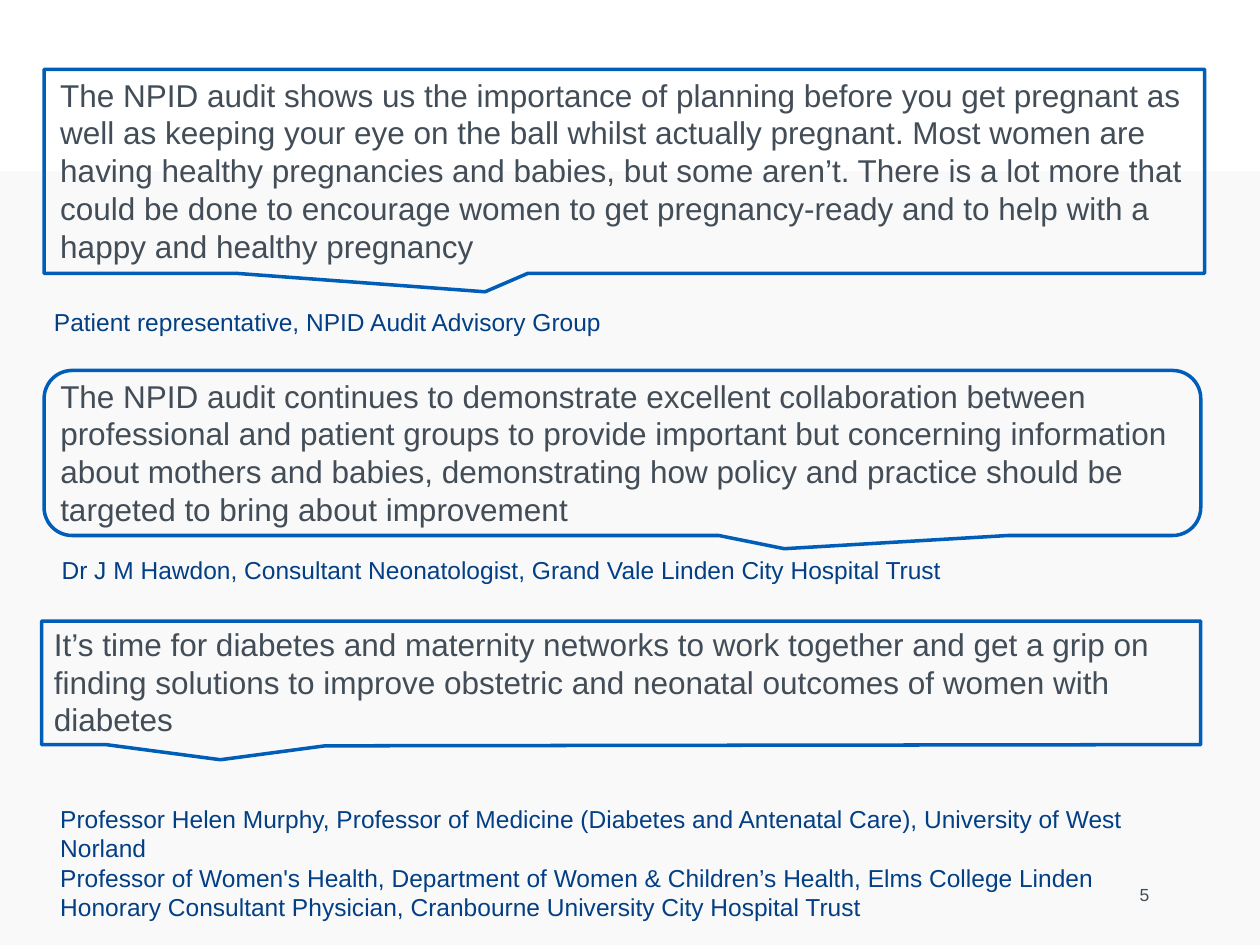
from pptx import Presentation
from pptx.dml.color import RGBColor
from pptx.enum.shapes import MSO_SHAPE
from pptx.enum.text import MSO_ANCHOR, MSO_AUTO_SIZE, PP_ALIGN
from pptx.util import Emu, Pt

RECT = MSO_SHAPE.RECTANGLE
SQUARE = MSO_SHAPE.RECTANGULAR_CALLOUT
ROUND = MSO_SHAPE.ROUNDED_RECTANGULAR_CALLOUT
TOP, MIDDLE = MSO_ANCHOR.TOP, MSO_ANCHOR.MIDDLE
LEFT, RIGHT = PP_ALIGN.LEFT, PP_ALIGN.RIGHT
GROW, FIXED = MSO_AUTO_SIZE.SHAPE_TO_FIT_TEXT, MSO_AUTO_SIZE.NONE

PALE = RGBColor(0xF9, 0xF9, 0xF9)
BLUE = RGBColor(0x00, 0x5E, 0xB8)
NAVY = RGBColor(0x03, 0x3F, 0x85)
GREY = RGBColor(0x42, 0x4D, 0x58)

PX = 9144  # EMU in one px, at 100 px to the inch

QUOTE = {"name": "Arial", "size": Pt(18)}
SOURCE = {"name": "Arial", "size": Pt(14)}
NUMBER = {"name": "Arial", "size": Pt(10)}


def emu(*px):
    return [Emu(n * PX) for n in px]


class Page:
    def __init__(self, slide):
        self.shapes = slide.shapes

    def band(self, box, color):
        shape = self.shapes.add_shape(RECT, *emu(*box))
        shape.shadow.inherit = False
        shape.fill.solid()
        shape.fill.fore_color.rgb = color
        shape.line.fill.background()

    def outline(self, shape):
        """Leave only a blue line around the shape."""
        shape.shadow.inherit = False
        shape.fill.background()
        shape.line.color.rgb = BLUE
        shape.line.width = Pt(2)

    def bubble(self, kind, box, *tail):
        shape = self.shapes.add_shape(kind, *emu(*box))
        for i, value in enumerate(tail):
            shape.adjustments[i] = value
        self.outline(shape)

    def polygon(self, start, *points):
        draw = self.shapes.build_freeform(*start, scale=PX)
        draw.add_line_segments(points, close=True)
        self.outline(draw.convert_to_shape())

    def text(self, box, lines, font, color, align=LEFT, anchor=TOP, fit=GROW):
        frame = self.shapes.add_textbox(*emu(*box)).text_frame
        layout = {"word_wrap": True, "auto_size": fit, "vertical_anchor": anchor}
        for key, value in layout.items():
            setattr(frame, key, value)
        frame.text = "\n".join(lines)
        for para in frame.paragraphs:
            para.alignment = align
            for key, value in font.items():
                setattr(para.font, key, value)
            para.font.color.rgb = color


QUOTES = [
    ((38, 55, 916, 162),
     "The NPID audit shows us the importance of planning before you get "
     "pregnant as well as keeping your eye on the ball whilst actually "
     "pregnant. Most women are having healthy pregnancies and babies, but "
     "some aren’t. There is a lot more that could be done to encourage women "
     "to get pregnancy-ready and to help with a happy and healthy pregnancy"),
    ((38, 294, 919, 131),
     "The NPID audit continues to demonstrate excellent collaboration between "
     "professional and patient groups to provide important but concerning "
     "information about mothers and babies, demonstrating how policy and "
     "practice should be targeted to bring about improvement"),
    ((33, 491, 924, 102),
     "It’s time for diabetes and maternity networks to work together and get "
     "a grip on finding solutions to improve obstetric and neonatal outcomes "
     "of women with diabetes"),
]

SOURCES = [
    ((33, 239, 870, 34), ["Patient representative, NPID Audit Advisory Group"]),
    ((39, 436, 921, 34),
     ["Dr J M Hawdon, Consultant Neonatologist, Grand Vale Linden City "
      "Hospital Trust"]),
    ((38, 633, 910, 127),
     ["Professor Helen Murphy, Professor of Medicine (Diabetes and Antenatal "
      "Care), University of West Norland",
      "Professor of Women's Health, Department of Women & Children’s Health, "
      "Elms College Linden",
      "Honorary Consultant Physician, Cranbourne University City Hospital "
      "Trust"]),
]


def main():
    deck = Presentation()
    deck.slide_width, deck.slide_height = emu(1000, 750)
    page = Page(deck.slides.add_slide(deck.slide_layouts[6]))

    page.band((0, 136, 1000, 614), PALE)
    page.text((689, 690, 233, 40), ["5"], NUMBER, GREY, RIGHT, MIDDLE, FIXED)

    page.bubble(SQUARE, (35, 55, 921, 162), -0.12, 0.59)
    page.bubble(ROUND, (35, 294, 918, 131), 0.14, 0.58, 0.17)
    page.polygon((33, 493), (953, 493), (953, 591), (258, 592),
                 (175, 603), (84, 591), (33, 591))

    for box, quote in QUOTES:
        page.text(box, [quote], QUOTE, GREY)
    for box, lines in SOURCES:
        page.text(box, lines, SOURCE, NAVY)

    deck.save("out.pptx")


if __name__ == "__main__":
    main()
